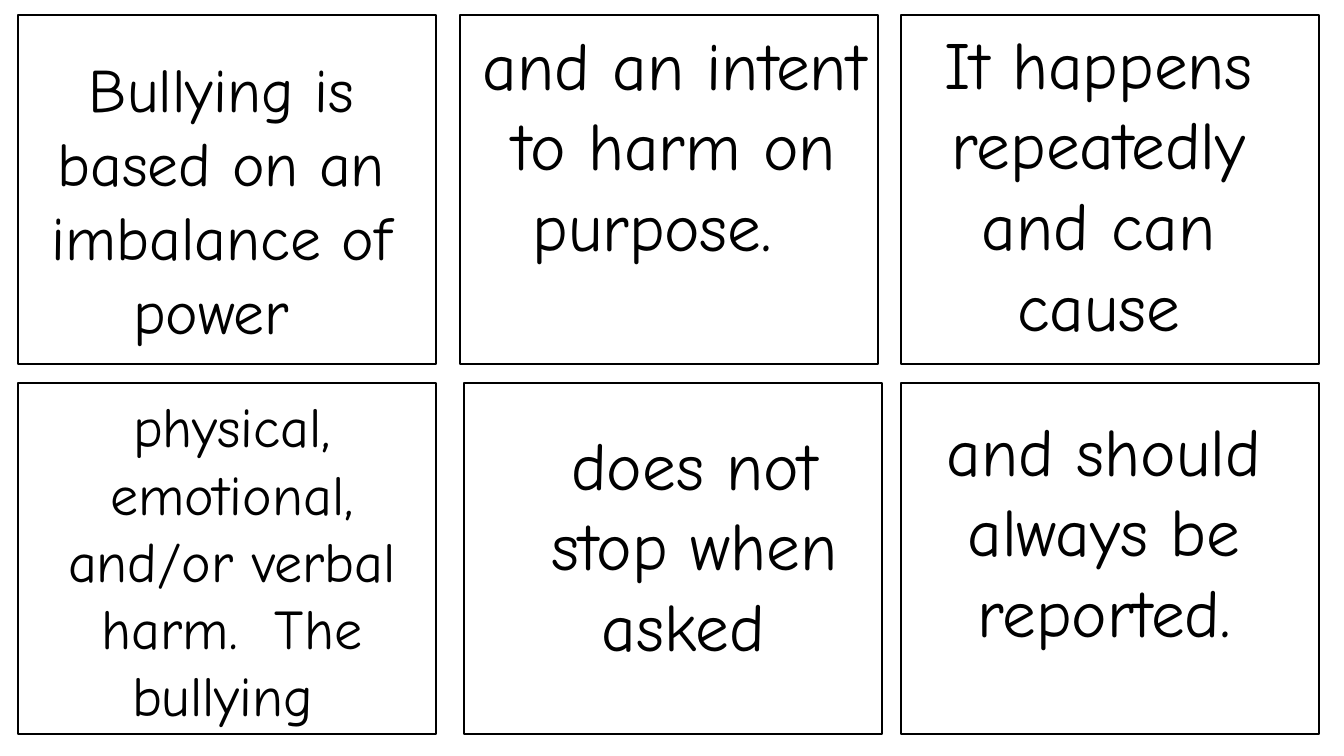
from pptx import Presentation
from pptx.dml.color import RGBColor
from pptx.enum.shapes import MSO_SHAPE
from pptx.enum.text import MSO_AUTO_SIZE, PP_ALIGN
from pptx.util import Pt

BLACK = RGBColor(0x00, 0x00, 0x00)
WHITE = RGBColor(0xFF, 0xFF, 0xFF)
PX = 914400 / 100.8  # EMU per px

# Card grid: (top, height, lefts) of each row
CARD_WIDTH = 418
CARD_ROWS = [
    (15, 349, (18, 460, 901)),
    (383, 351, (18, 464, 901)),
]

# Card wording: text, size in points, (left, top, width, height)
CARD_TEXTS = [
    ("Bullying is based on an imbalance of power ", 44, (5, 46, 433, 308)),
    ("and an intent to harm on purpose.  ", 48, (471, 18, 407, 336)),
    ("It happens repeatedly and can cause", 48, (901, 17, 395, 334)),
    ("physical, emotional, and/or verbal harm.  The bullying ", 40,
     (23, 387, 418, 350)),
    ("does not stop when asked ", 48, (499, 418, 391, 254)),
    ("and should always be reported.", 48, (918, 404, 372, 254)),
]
FRAME_FORMAT = {"word_wrap": True, "auto_size": MSO_AUTO_SIZE.SHAPE_TO_FIT_TEXT}


def emu(*lengths):
    return [round(n * PX) for n in lengths]


def add_card(slide, box):
    sp = slide.shapes.add_shape(MSO_SHAPE.RECTANGLE, *emu(*box))
    sp.shadow.inherit = False
    sp.fill.solid()
    sp.fill.fore_color.rgb = WHITE
    sp.line.color.rgb = BLACK
    sp.line.width = Pt(1)


def add_text(slide, text, size, box):
    tf = slide.shapes.add_textbox(*emu(*box)).text_frame
    for name, value in FRAME_FORMAT.items():
        setattr(tf, name, value)
    p = tf.paragraphs[0]
    p.alignment = PP_ALIGN.CENTER
    r = p.add_run()
    r.text = text
    for name, value in {"name": "Comic Neue", "size": Pt(size)}.items():
        setattr(r.font, name, value)
    r.font.color.rgb = BLACK


def main():
    prs = Presentation()
    prs.slide_width, prs.slide_height = emu(1344, 756)
    slide = prs.slides.add_slide(prs.slide_layouts[6])

    # Card outlines
    for top, height, lefts in CARD_ROWS:
        for left in lefts:
            add_card(slide, (left, top, CARD_WIDTH, height))

    # Card wording
    for text, size, box in CARD_TEXTS:
        add_text(slide, text, size, box)

    prs.save("out.pptx")


if __name__ == "__main__":
    main()
